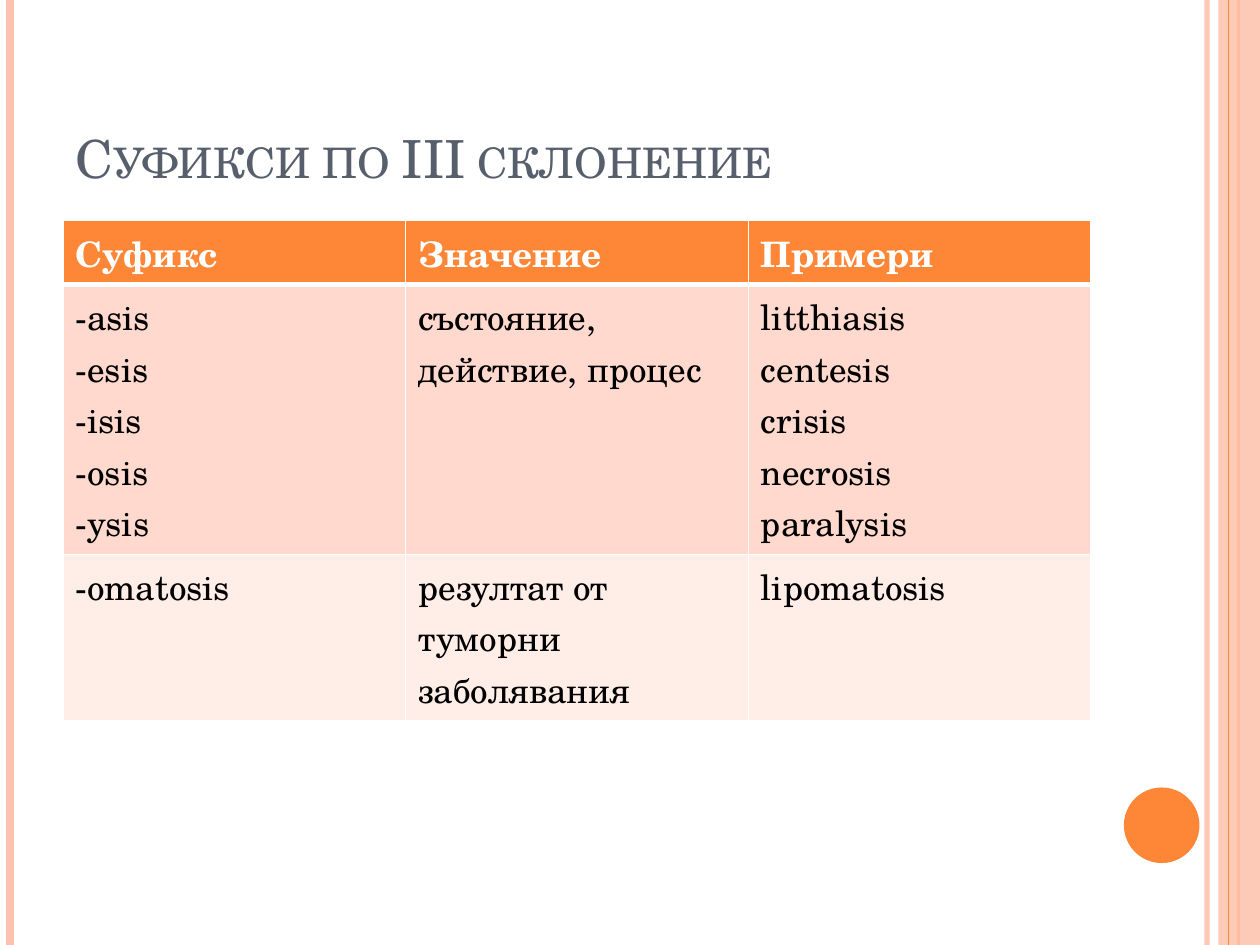
from dataclasses import dataclass

from lxml.etree import SubElement
from pptx import Presentation
from pptx.dml.color import RGBColor as Rgb
from pptx.enum.shapes import MSO_CONNECTOR as Connector, MSO_SHAPE as Shape
from pptx.enum.text import MSO_ANCHOR as Anchor
from pptx.oxml.ns import qn
from pptx.util import Inches, Pt


@dataclass(frozen=True)
class Theme:
    font: str = "TeX Gyre Schola"
    accent: str = "FE8637"
    stripe: str = "FEC3AE"
    heading: str = "575F6D"
    light: str = "FFFFFF"
    dark: str = "000000"
    bands: tuple = ("FFD9CE", "FFEDE8")
    title_size: int = 30
    table_size: int = 20
    thin_border: int = 1
    thick_border: int = 3


THEME = Theme()

HEADINGS = ["Суфикс", "Значение", "Примери"]
SUFFIX_GROUPS = [
    [
        ["-asis", "-esis", "-isis", "-osis", "-ysis"],
        ["състояние, действие, процес"],
        ["litthiasis", "centesis", "crisis", "necrosis", "paralysis"],
    ],
    [["-omatosis"], ["резултат от туморни заболявания"], ["lipomatosis"]],
]
ROW_HEIGHTS = [0.51, 2.14, 1.32]


def set_opacity(fill, percent):
    color = fill.find(".//" + qn("a:srgbClr"))
    SubElement(color, qn("a:alpha")).set("val", str(percent * 1000))


def add_stripe(slide, x, color, width, opacity=100):
    stripe = slide.shapes.add_connector(
        Connector.STRAIGHT, Inches(x), Inches(0), Inches(x), Inches(7.5)
    )
    stripe.line.color.rgb = Rgb.from_string(color)
    stripe.line.width = Pt(width)
    properties = stripe._element.spPr
    if opacity < 100:
        set_opacity(properties.find(qn("a:ln")), opacity)
    SubElement(properties, qn("a:effectLst"))


def add_block(slide, kind, left, top, width, height, color, opacity=100):
    block = slide.shapes.add_shape(
        kind, Inches(left), Inches(top), Inches(width), Inches(height)
    )
    block.shadow.inherit = False
    block.fill.solid()
    block.fill.fore_color.rgb = Rgb.from_string(color)
    block.line.fill.background()
    if opacity < 100:
        set_opacity(block._element.spPr.find(qn("a:solidFill")), opacity)


def add_run(paragraph, text, size, color, bold=False):
    run = paragraph.add_run()
    run.text = text
    run.font.name = THEME.font
    run.font.size = Pt(size)
    run.font.bold = bold
    run.font.color.rgb = Rgb.from_string(color)
    return run


def add_title(slide, text):
    title = slide.shapes.add_textbox(
        Inches(0.5), Inches(0.3), Inches(8.17), Inches(1.25)
    ).text_frame
    title.word_wrap = True
    title.vertical_anchor = Anchor.BOTTOM
    run = add_run(title.paragraphs[0], text, THEME.title_size, THEME.heading)
    run.font._element.set("cap", "small")


def set_borders(cell, top, bottom):
    properties = cell._tc.get_or_add_tcPr()
    widths = {"L": THEME.thin_border, "R": THEME.thin_border, "T": top, "B": bottom}
    for side, width in widths.items():
        border = SubElement(properties, qn(f"a:ln{side}"), w=str(Pt(width)))
        fill = SubElement(border, qn("a:solidFill"))
        SubElement(fill, qn("a:srgbClr"), val=THEME.light)


def fill_cell(cell, lines, background, color, bold, top, bottom):
    set_borders(cell, top, bottom)
    cell.fill.solid()
    cell.fill.fore_color.rgb = Rgb.from_string(background)
    frame = cell.text_frame
    for index, line in enumerate(lines):
        paragraph = frame.add_paragraph() if index else frame.paragraphs[0]
        add_run(paragraph, line, THEME.table_size, color, bold)


def add_suffix_table(slide):
    rows = [[[heading] for heading in HEADINGS]] + SUFFIX_GROUPS
    table = slide.shapes.add_table(
        len(rows), len(HEADINGS), Inches(0.5), Inches(1.75),
        Inches(8.16), Inches(sum(ROW_HEIGHTS)),
    ).table
    table.horz_banding = False
    thin, thick = THEME.thin_border, THEME.thick_border
    for row, (contents, height) in enumerate(zip(rows, ROW_HEIGHTS)):
        table.rows[row].height = Inches(height)
        is_header = row == 0
        background = THEME.accent if is_header else THEME.bands[(row - 1) % 2]
        color = THEME.light if is_header else THEME.dark
        top = thick if row == 1 else thin
        bottom = thick if is_header else thin
        for column, lines in enumerate(contents):
            fill_cell(table.cell(row, column), lines, background, color,
                      is_header, top, bottom)


def main():
    deck = Presentation()
    deck.slide_width, deck.slide_height = Inches(10), Inches(7.5)
    slide = deck.slides.add_slide(deck.slide_layouts[6])
    add_stripe(slide, 9.58, THEME.stripe, 3, 93)
    add_stripe(slide, 0.08, THEME.stripe, 4.5)
    add_stripe(slide, 9.83, THEME.accent, 1.5)
    add_block(slide, Shape.RECTANGLE, 9.67, 0, 0.33, 7.5, THEME.stripe, 87)
    add_stripe(slide, 9.75, THEME.accent, 0.75)
    add_block(slide, Shape.OVAL, 8.92, 6.25, 0.6, 0.6, THEME.accent)
    add_title(slide, "Суфикси по III склонение")
    add_suffix_table(slide)
    deck.save("out.pptx")


if __name__ == "__main__":
    main()
